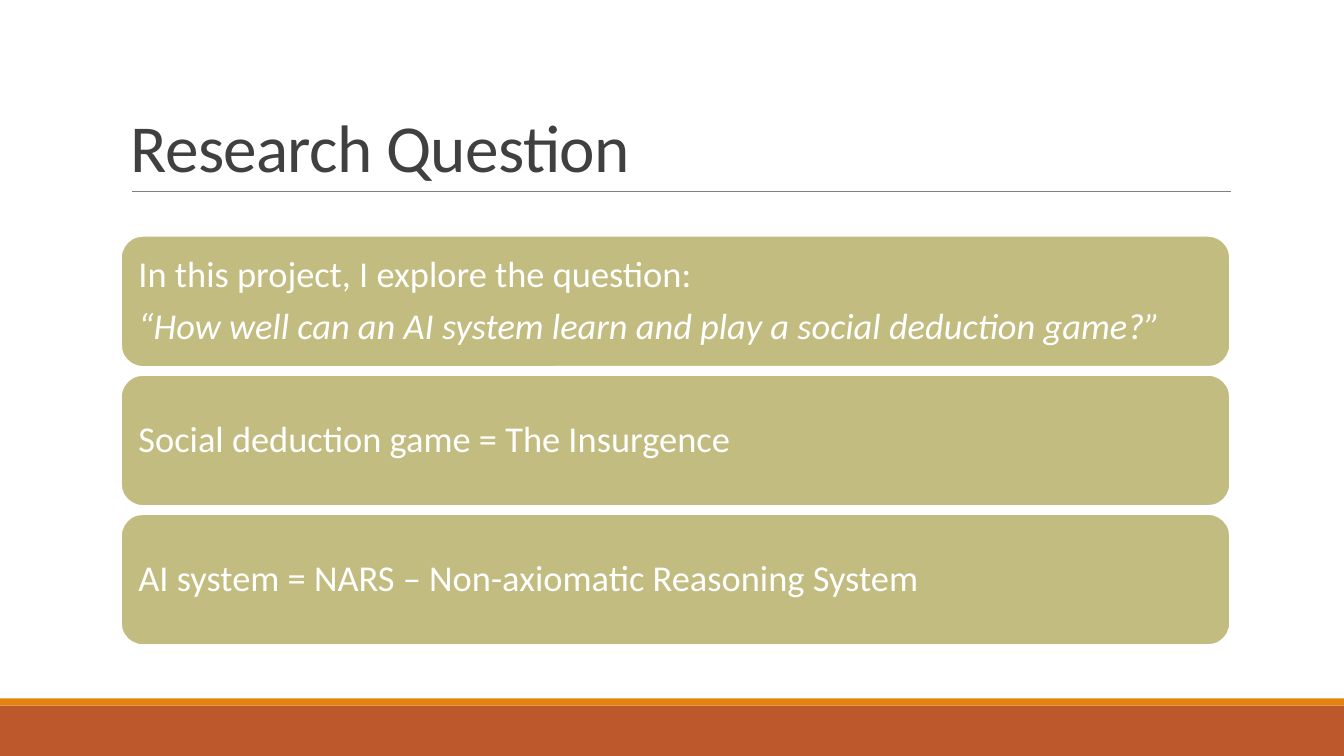
from dataclasses import dataclass

from pptx import Presentation
from pptx import util as u
from pptx.dml.color import RGBColor
from pptx.enum import shapes, text
from pptx.oxml.ns import qn


@dataclass(frozen=True)
class Theme:
    font: str = "Calibri"
    title_size: float = 48
    body_size: float = 26
    title: str = "404040"
    rule: str = "808080"
    card: str = "C2BC80"
    white: str = "FFFFFF"
    band: str = "BD582C"
    accent: str = "E48312"


class SlideBuilder:
    def __init__(self, s, theme):
        self.s = s
        self.theme = theme

    def style(self, p, size, color, line_spacing):
        p.alignment = text.PP_ALIGN.LEFT
        p.line_spacing = line_spacing
        p.font.name = self.theme.font
        p.font.size = u.Pt(size)
        p.font.color.rgb = RGBColor.from_string(color)

    def shape(self, kind, x, y, w, h, fill):
        sp = self.s.shapes.add_shape(
            kind, u.Inches(x), u.Inches(y), u.Inches(w), u.Inches(h))
        sp.shadow.inherit = False
        sp.fill.solid()
        sp.fill.fore_color.rgb = RGBColor.from_string(fill)
        sp.line.fill.background()
        return sp

    def band(self, y, h, fill):
        self.shape(shapes.MSO_SHAPE.RECTANGLE, 0, y, 13.33, h, fill)

    def rule(self, x1, x2, y):
        line = self.s.shapes.add_connector(
            shapes.MSO_CONNECTOR.STRAIGHT,
            u.Inches(x1), u.Inches(y), u.Inches(x2), u.Inches(y))
        line.line.color.rgb = RGBColor.from_string(self.theme.rule)
        line.line.width = u.Pt(0.5)
        sp_pr = line._element.spPr
        sp_pr.append(sp_pr.makeelement(qn("a:effectLst"), {}))

    def title(self, words, x, y, w, h):
        tf = self.s.shapes.add_textbox(
            u.Inches(x), u.Inches(y), u.Inches(w), u.Inches(h)).text_frame
        tf.word_wrap = True
        tf.vertical_anchor = text.MSO_ANCHOR.BOTTOM
        p = tf.paragraphs[0]
        r = p.add_run()
        r.text = words
        self.style(p, self.theme.title_size, self.theme.title, 0.85)
        r.font._element.set("spc", "-50")  # slightly tightened letters

    def card(self, lines, x, y, w, h):
        sp = self.shape(shapes.MSO_SHAPE.ROUNDED_RECTANGLE,
                        x, y, w, h, self.theme.card)
        sp.line.color.rgb = RGBColor.from_string(self.theme.white)
        sp.line.width = u.Pt(1.25)
        tf = sp.text_frame
        tf.word_wrap = True
        tf.vertical_anchor = text.MSO_ANCHOR.MIDDLE
        tf.margin_left = tf.margin_right = u.Inches(0.11)
        tf.margin_top = tf.margin_bottom = u.Inches(0.11)
        for i, (words, italic) in enumerate(lines):
            p = tf.add_paragraph() if i else tf.paragraphs[0]
            p.text = words
            self.style(p, self.theme.body_size, self.theme.white, 0.9)
            p.font.italic = italic
            p.space_after = u.Pt(9.1)


CARDS = [
    [("In this project, I explore the question:", False),
     ("“How well can an AI system learn and play a social deduction game?”", True)],
    [("Social deduction game = The Insurgence", False)],
    [("AI system = NARS – Non-axiomatic Reasoning System", False)],
]


def main():
    prs = Presentation()
    prs.slide_width, prs.slide_height = u.Inches(13.33), u.Inches(7.5)
    theme = Theme()
    b = SlideBuilder(prs.slides.add_slide(prs.slide_layouts[6]), theme)

    # Footer bands
    b.band(7, 0.5, theme.band)
    b.band(6.93, 0.07, theme.accent)

    # Heading
    b.rule(1.31, 12.21, 1.9)
    b.title("Research Question", 1.2, 0.31, 11, 1.59)

    # Stacked cards
    for i, lines in enumerate(CARDS):
        b.card(lines, 1.2, 2.34 + i * 1.38, 11, 1.3)

    prs.save("out.pptx")


if __name__ == "__main__":
    main()
